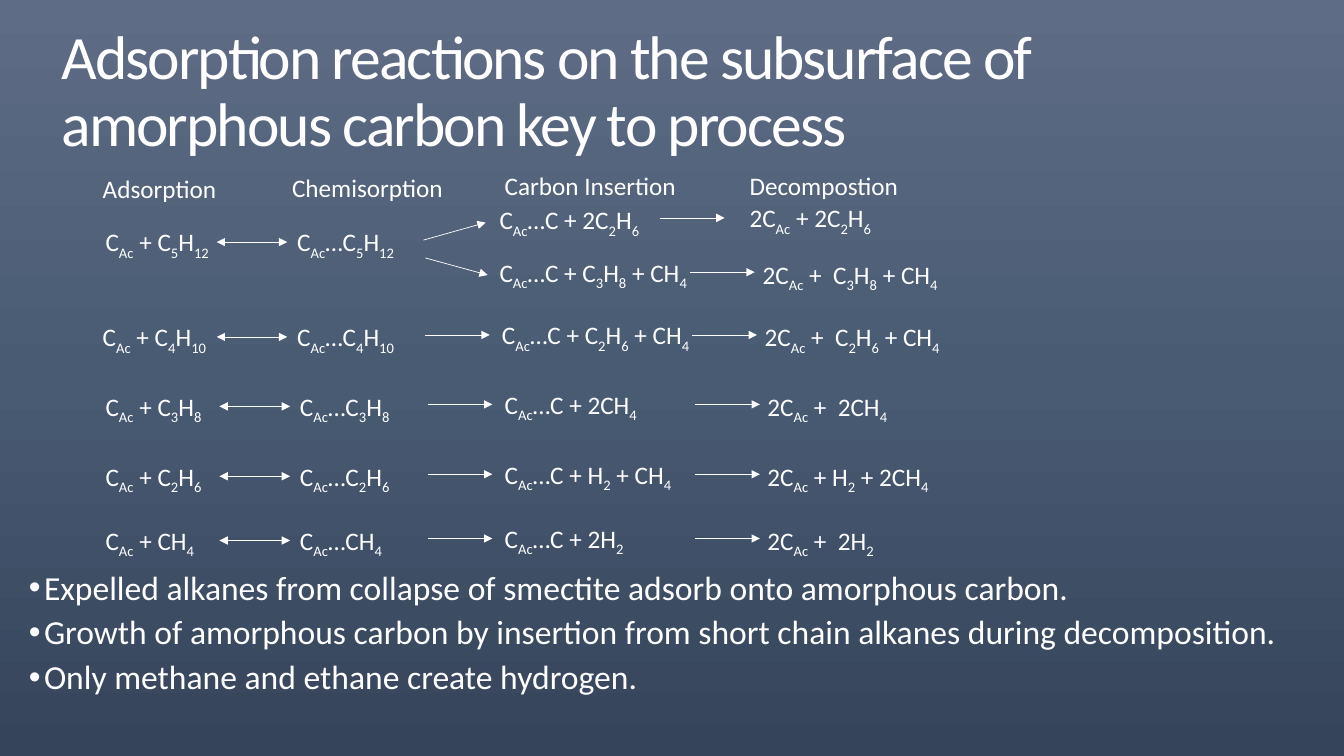
from copy import deepcopy
from pptx import Presentation
from pptx import util as u
from pptx.dml.color import RGBColor
from pptx.enum import shapes, text
from pptx.oxml import ns, xmlchemy

Cm, Pt = u.Cm, u.Pt
WHITE = RGBColor(0xFF, 0xFF, 0xFF)
SKY = [RGBColor(0x5E, 0x6D, 0x85), RGBColor(0x49, 0x5A, 0x73), RGBColor(0x35, 0x44, 0x5A)]
FONT = "Calibri"
ROW_H = 1.02          # height of one formula box, cm
RAISE = 0.05          # the insertion column sits this much higher
COLUMNS = [2.34, 7.24, 12.4, 19.02]
ARROWS = [(5.46, 7.24), (10.72, 12.34), (17.45, 19.08)]

# Formulas mark their subscripts with underscores; each has its box width in cm
HEADINGS = [("Adsorption", 2.34, 4.24, 3.4), ("Chemisorption", 7.11, 4.22, 4.37),
            ("Carbon Insertion", 12.47, 4.17, 5.03), ("Decompostion", 18.64, 4.17, 4.29)]
PENTANE = [("C_Ac_ + C_5_H_12_", 2.41, 0, 3.4), ("C_Ac_…C_5_H_12_", 7.24, 0, 3.12),
           ("C_Ac_…C + 2C_2_H_6_", 12.34, -0.56, 4.29),
           ("2C_Ac_ + 2C_2_H_6_", 18.64, -0.61, 3.84),
           ("C_Ac_…C + C_3_H_8_ + CH_4_", 12.34, 0.76, 5.44),
           ("2C_Ac_ +  C_3_H_8_ + CH_4_", 18.97, 0.81, 5.13)]
PENTANE_ARROWS = [(10.67, 0.46, 12.24, 0.02), (10.72, 0.91, 12.29, 1.34),
                  (16.64, -0.1, 18.26, -0.1), (17.4, 1.27, 19.02, 1.27)]
CHAINS = [  # top, shift to the right, four formulas
    (7.98, 0, [("C_Ac_ + C_4_H_10_", 3.3), ("C_Ac_…C_4_H_10_", 3.12),
               ("C_Ac_…C + C_2_H_6_ + CH_4_", 5.44), ("2C_Ac_ +  C_2_H_6_ + CH_4_", 5.13)]),
    (9.73, 0.07, [("C_Ac_ + C_3_H_8_", 3.07), ("C_Ac_…C_3_H_8_", 2.92),
                  ("C_Ac_…C + 2CH_4_", 4.11), ("2C_Ac_ +  2CH_4_", 3.66)]),
    (11.49, 0.07, [("C_Ac_ + C_2_H_6_", 3.07), ("C_Ac_…C_2_H_6_", 2.92),
                   ("C_Ac_…C + H_2_ + CH_4_", 4.88), ("2C_Ac_ + H_2_ + 2CH_4_", 4.75)]),
    (13.11, 0.07, [("C_Ac_ + CH_4_", 2.87), ("C_Ac_…CH_4_", 2.69),
                   ("C_Ac_…C + 2H_2_", 3.63), ("2C_Ac_ +  2H_2_", 3.33)]),
]
BULLETS = ["Expelled alkanes from collapse of smectite adsorb onto amorphous carbon.",
           "Growth of amorphous carbon by insertion from short chain alkanes during decomposition.",
           "Only methane and ethane create hydrogen."]


def set_all(obj, values):
    for name, value in values.items():
        setattr(obj, name, value)


def add_box(s, x, y, w, h, **frame):
    sp = s.shapes.add_textbox(Cm(x), Cm(y), Cm(w), Cm(h))
    set_all(sp.text_frame, {"word_wrap": True, **frame})
    return sp.text_frame


def add_run(p, words, size):
    r = p.add_run()
    r.text = words
    set_all(r.font, {"name": FONT, "size": Pt(size)})
    r.font.color.rgb = WHITE
    return r


def add_formula(s, formula, x, y, w):
    tf = add_box(s, x, y, w, ROW_H, word_wrap=False,
                 auto_size=text.MSO_AUTO_SIZE.SHAPE_TO_FIT_TEXT)
    for i, part in enumerate(formula.split("_")):
        if part:
            r = add_run(tf.paragraphs[0], part, 18)
            if i % 2:
                r.font._element.set("baseline", "-25000")


def add_arrow(s, x1, y1, x2, y2, both=False):
    line = s.shapes.add_connector(shapes.MSO_CONNECTOR.STRAIGHT,
                                  Cm(x1), Cm(y1), Cm(x2), Cm(y2))
    line.line.color.rgb = WHITE
    line.line.width = Pt(0.5)
    ln = line.line._get_or_add_ln()
    for end in ["headEnd", "tailEnd"] if both else ["tailEnd"]:
        ln.append(xmlchemy.OxmlElement("a:" + end))
        ln[-1].set("type", "triangle")
    line._element.spPr.append(xmlchemy.OxmlElement("a:effectLst"))


def paint_background(s):
    fill = s.background.fill
    fill.gradient()
    fill.gradient_angle = 270
    first = next(s._element.iter(ns.qn("a:gs")))
    first.addnext(deepcopy(first))
    for i, stop in enumerate(fill.gradient_stops):
        stop.position = i / 2
        stop.color.rgb = SKY[i]


def add_title(s, x, y, w, h):
    tf = add_box(s, x, y, w, h, vertical_anchor=text.MSO_ANCHOR.MIDDLE)
    p = tf.paragraphs[0]
    p.line_spacing = 0.9
    r = add_run(p, "Adsorption reactions on the subsurface of "
                   "amorphous carbon key to process", 44)
    r.font._element.set("spc", "-140")


def add_pentane(s, top):
    """The first reaction, which branches into two insertions."""
    for formula, x, dy, w in PENTANE:
        add_formula(s, formula, x, top + dy, w)
    start, end = ARROWS[0]
    add_arrow(s, start, top + ROW_H / 2, end, top + ROW_H / 2, both=True)
    for x1, dy1, x2, dy2 in PENTANE_ARROWS:
        add_arrow(s, x1, top + dy1, x2, top + dy2)


def add_chain(s, top, shift, formulas):
    """One straight reaction: reversible first step, then two one-way steps."""
    for i, (formula, w) in enumerate(formulas):
        add_formula(s, formula, COLUMNS[i] + shift, top - RAISE * (i == 2), w)
    for i, (start, end) in enumerate(ARROWS):
        y = top + ROW_H / 2 - RAISE * (i > 0)
        add_arrow(s, start + shift, y, end + shift, y, both=i == 0)


def add_bullets(s, x, y, w, h):
    tf = add_box(s, x, y, w, h)
    for i, words in enumerate(BULLETS):
        p = tf.add_paragraph() if i else tf.paragraphs[0]
        set_all(p, {"line_spacing": 0.9, "space_before": Pt(6)})
        add_run(p, words, 24)
        pPr = p._p.get_or_add_pPr()
        pPr.set("marL", str(Cm(0.38)))
        pPr.set("indent", str(-Cm(0.38)))
        for tag, key, value in [("a:buFont", "typeface", "Arial"), ("a:buChar", "char", "•")]:
            pPr.append(xmlchemy.OxmlElement(tag))
            pPr[-1].set(key, value)


def main():
    prs = Presentation()
    set_all(prs, {"slide_width": Cm(33.87), "slide_height": Cm(19.05)})
    s = prs.slides.add_slide(prs.slide_layouts[6])
    paint_background(s)
    add_title(s, 1.3, 0.51, 31.29, 3.68)
    # Reaction scheme
    for heading in HEADINGS:
        add_formula(s, *heading)
    add_pentane(s, 5.59)
    for chain in CHAINS:
        add_chain(s, *chain)
    # Conclusions
    add_bullets(s, 0.48, 14.27, 32.92, 4.37)
    prs.save("out.pptx")


if __name__ == "__main__":
    main()
